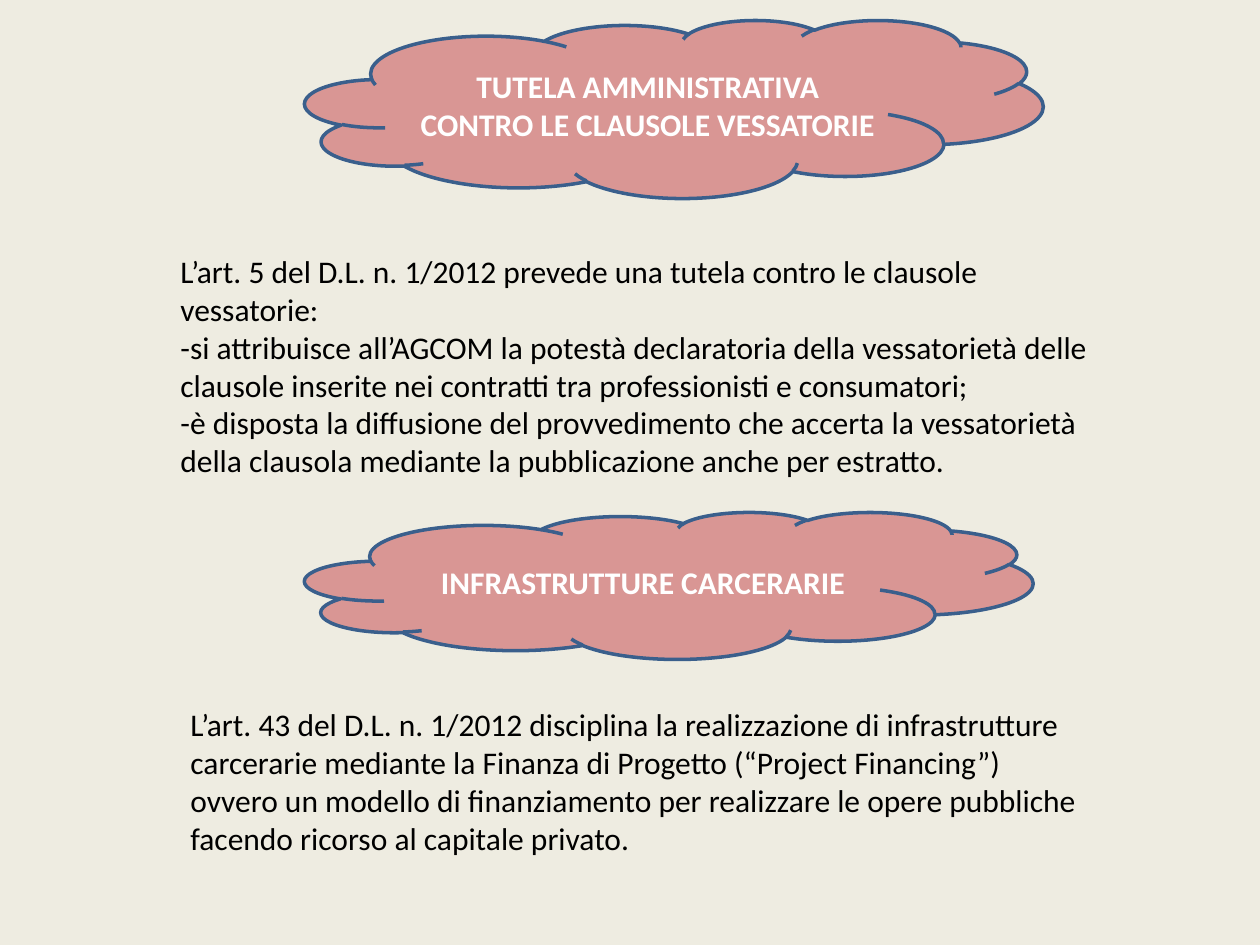
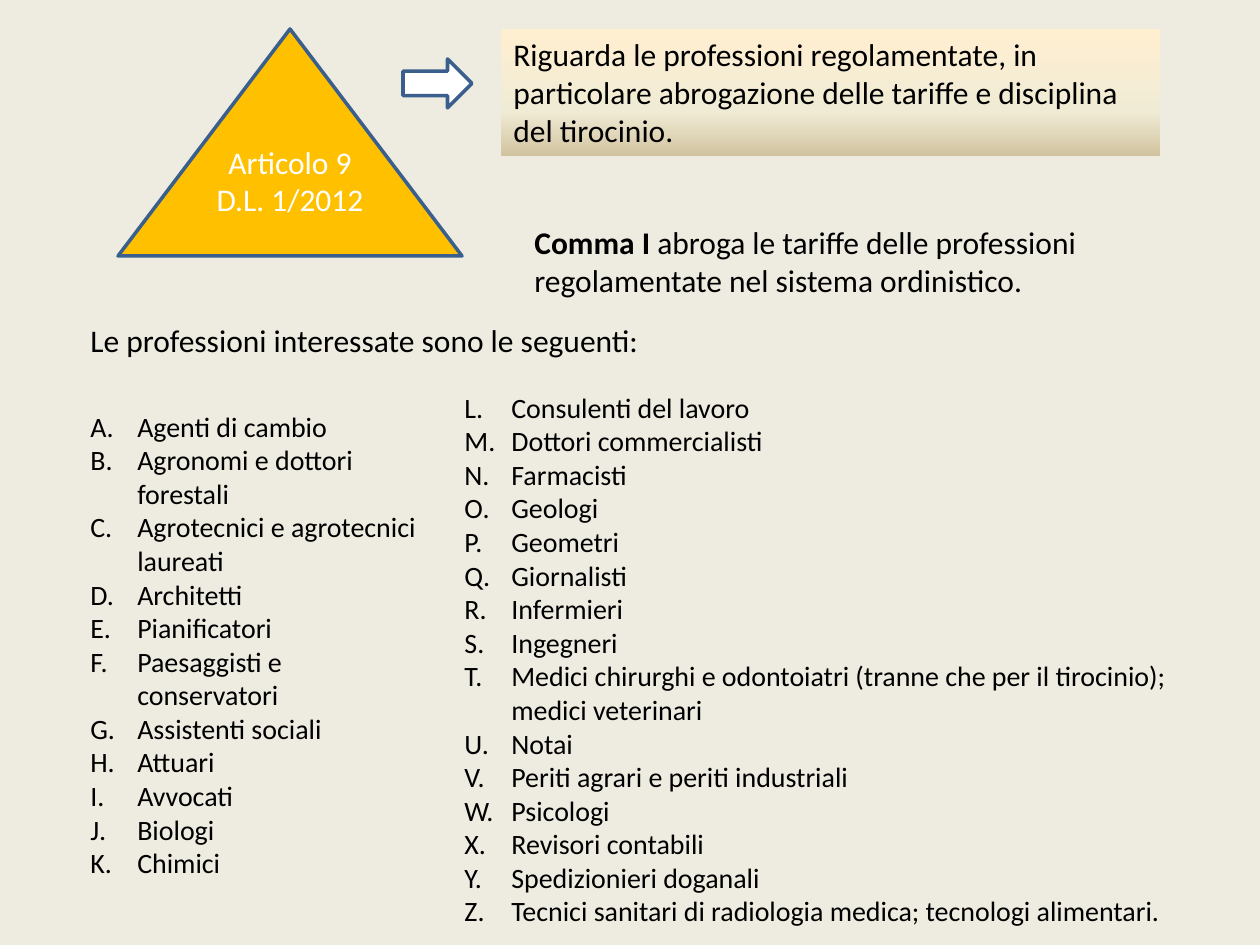
from copy import deepcopy
from dataclasses import dataclass

from lxml.etree import SubElement
from pptx import Presentation
from pptx.dml.color import RGBColor
from pptx.enum.shapes import MSO_SHAPE
from pptx.enum.text import MSO_ANCHOR, MSO_AUTO_SIZE, PP_ALIGN
from pptx.oxml.ns import qn
from pptx.util import Emu, Pt


@dataclass(frozen=True)
class Theme:
    """Colours, font and type sizes of the deck."""
    ground: str = "EEECE1"
    cloud: str = "D99694"
    gold: str = "FFC000"
    edge: str = "3A5F8C"
    ink: str = "000000"
    white: str = "FFFFFF"
    fade: tuple = ((0, "FFEFD1"), (0.65, "F0EBD5"), (1, "D1C39F"))
    font: str = "Calibri"
    body: int = 18
    small: int = 16
    stroke: int = 2


THEME = Theme()
INDENT = 47

RULE = [
    "L’art. 5 del D.L. n. 1/2012 prevede una tutela contro le clausole vessatorie:",
    "-si attribuisce all’AGCOM la potestà declaratoria della vessatorietà delle "
    "clausole inserite nei contratti tra professionisti e consumatori;",
    "-è disposta la diffusione del provvedimento che accerta la vessatorietà "
    "della clausola mediante la pubblicazione anche per estratto.",
]
JAILS = [
    "L’art. 43 del D.L. n. 1/2012 disciplina la realizzazione di infrastrutture "
    "carcerarie mediante la Finanza di Progetto (“Project Financing”) ovvero un "
    "modello di finanziamento per realizzare le opere pubbliche facendo ricorso "
    "al capitale privato.",
]
SCOPE = [
    "Riguarda le professioni regolamentate, in particolare abrogazione delle "
    "tariffe e disciplina del tirocinio.",
]
JOBS_LEFT = [
    "Agenti di cambio",
    "Agronomi e dottori forestali",
    "Agrotecnici e agrotecnici laureati",
    "Architetti",
    "Pianificatori",
    "Paesaggisti e conservatori",
    "Assistenti sociali",
    "Attuari",
    "Avvocati",
    "Biologi",
    "Chimici",
]
JOBS_RIGHT = [
    "Consulenti del lavoro",
    "Dottori commercialisti",
    "Farmacisti",
    "Geologi",
    "Geometri",
    "Giornalisti",
    "Infermieri",
    "Ingegneri",
    "Medici chirurghi e odontoiatri (tranne che per il tirocinio); medici veterinari",
    "Notai",
    "Periti agrari e periti industriali",
    "Psicologi",
    "Revisori contabili",
    "Spedizionieri doganali",
    "Tecnici sanitari di radiologia medica; tecnologi alimentari.",
]


def px(count):
    """Turn pixels into EMU."""
    return Emu(round(count * 914400 / 126))


def rgb(code):
    """Turn a hex code into a colour."""
    return RGBColor.from_string(code)


def style(run, size, ink, bold=False):
    """Format one run."""
    font = run.font
    font.name, font.size, font.bold = THEME.font, Pt(size), bold
    font.color.rgb = rgb(ink)


def write(frame, lines, size=THEME.body, ink=THEME.ink, bold=False,
          align=PP_ALIGN.LEFT):
    """Fill a text frame with one paragraph per line."""
    frame.word_wrap = True
    frame.text = "\n".join(lines)
    for para in frame.paragraphs:
        para.alignment = align
        for run in para.runs:
            style(run, size, ink, bold)


def note(slide, spot, lines, size=THEME.body):
    """Add a text box that grows with its text."""
    box = slide.shapes.add_textbox(*map(px, spot))
    write(box.text_frame, lines, size)
    box.text_frame.auto_size = MSO_AUTO_SIZE.SHAPE_TO_FIT_TEXT
    return box.text_frame


def letters(slide, spot, lines, start=1):
    """Add a list lettered from the given place in the alphabet."""
    for para in note(slide, spot, lines, THEME.small).paragraphs:
        props = para._p.get_or_add_pPr()
        props.set("marL", str(px(INDENT)))
        props.set("indent", str(-px(INDENT)))
        SubElement(props, qn("a:buAutoNum"), type="alphaUcPeriod",
                   startAt=str(start))


def figure(slide, kind, spot, fill, lines=(), bold=False):
    """Add an outlined shape with centred white text."""
    shape = slide.shapes.add_shape(kind, *map(px, spot))
    shape.shadow.inherit = False
    shape.fill.solid()
    shape.fill.fore_color.rgb = rgb(fill)
    shape.line.color.rgb = rgb(THEME.edge)
    shape.line.width = Pt(THEME.stroke)
    if lines:
        write(shape.text_frame, lines, ink=THEME.white, bold=bold,
              align=PP_ALIGN.CENTER)
        shape.text_frame.vertical_anchor = MSO_ANCHOR.MIDDLE
    return shape


def panel(slide, spot, lines):
    """Add a text panel that fades from top to bottom."""
    shape = slide.shapes.add_shape(MSO_SHAPE.RECTANGLE, *map(px, spot))
    shape.shadow.inherit = False
    shape.line.fill.background()
    shape.fill.gradient()
    shape.fill.gradient_angle = 270
    stops = shape._element.spPr.find(qn("a:gradFill")).find(qn("a:gsLst"))
    stops.append(deepcopy(stops[0]))
    for stop, (place, code) in zip(shape.fill.gradient_stops, THEME.fade):
        stop.position = place
        stop.color.rgb = rgb(code)
    write(shape.text_frame, lines)
    shape.text_frame.vertical_anchor = MSO_ANCHOR.TOP


def clauses(slide):
    """Build the slide on unfair terms and prisons."""
    figure(slide, MSO_SHAPE.CLOUD, (305, 20, 738, 178), THEME.cloud,
           ["TUTELA AMMINISTRATIVA CONTRO LE CLAUSOLE VESSATORIE"], True)
    note(slide, (168, 246, 955, 242), RULE)
    figure(slide, MSO_SHAPE.CLOUD, (305, 512, 728, 147), THEME.cloud,
           ["INFRASTRUTTURE CARCERARIE"], True)
    note(slide, (178, 699, 925, 165), JAILS)


def trades(slide):
    """Build the slide on regulated trades."""
    peak = figure(slide, MSO_SHAPE.ISOSCELES_TRIANGLE, (118, 29, 344, 227),
                  THEME.gold, ["Articolo 9", "D.L. 1/2012"])
    peak.text_frame.margin_bottom = px(44)
    note(slide, (78, 315, 1063, 50),
         ["Le professioni interessate sono le seguenti:"])
    figure(slide, MSO_SHAPE.RIGHT_ARROW, (403, 59, 69, 49), THEME.white)
    panel(slide, (501, 29, 659, 127), SCOPE)
    letters(slide, (78, 403, 354, 503), JOBS_LEFT)
    letters(slide, (452, 384, 788, 561), JOBS_RIGHT, len(JOBS_LEFT) + 1)
    para = note(slide, (522, 217, 620, 89), ["Comma I "]).paragraphs[0]
    para.runs[0].font.bold = True
    rest = para.add_run()
    rest.text = ("abroga le tariffe delle professioni regolamentate nel "
                 "sistema ordinistico.")
    style(rest, THEME.body, THEME.ink)


def main():
    """Build and save the deck."""
    deck = Presentation()
    deck.slide_width, deck.slide_height = px(1260), px(945)
    ground = deck.slide_master.background.fill
    ground.solid()
    ground.fore_color.rgb = rgb(THEME.ground)
    blank = deck.slide_layouts[6]
    for build in (clauses, trades):
        build(deck.slides.add_slide(blank))
    deck.save("out.pptx")


if __name__ == "__main__":
    main()
